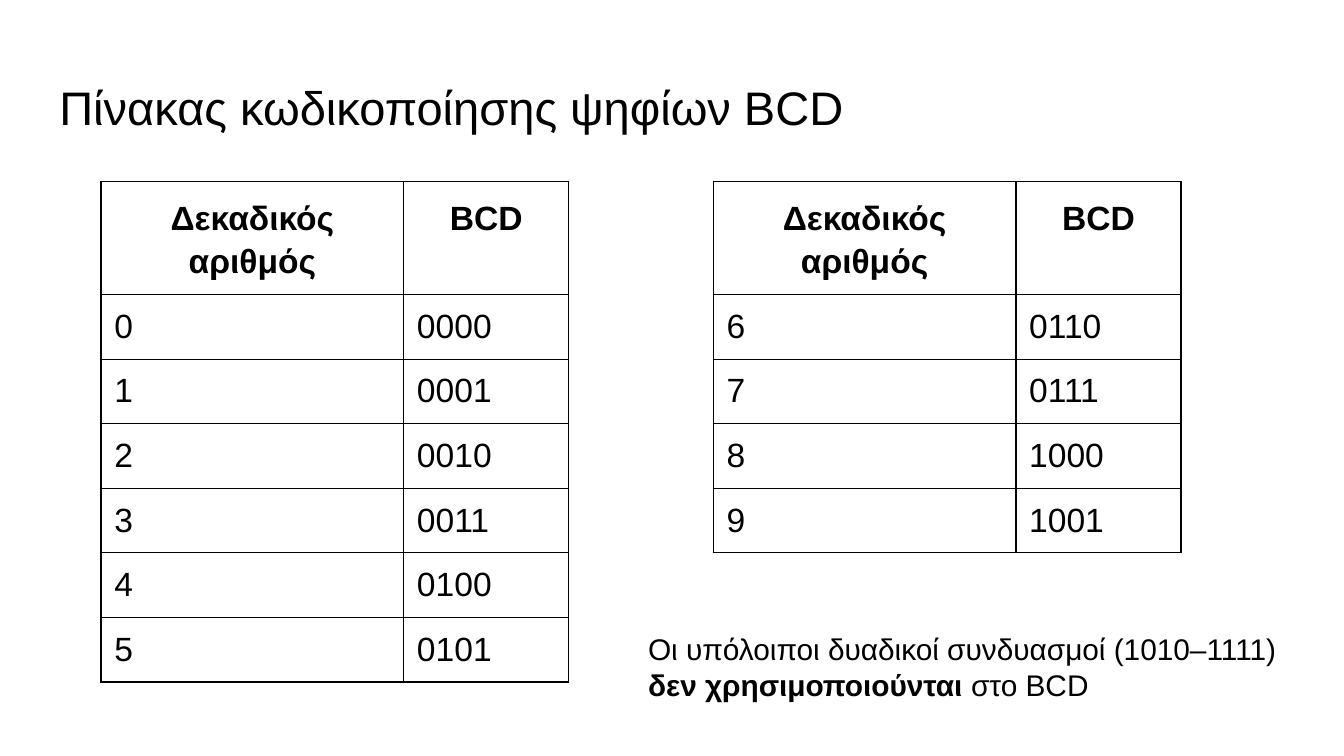
from lxml.etree import SubElement
from pptx import Presentation
from pptx.dml.color import RGBColor
from pptx.enum.text import MSO_ANCHOR, MSO_AUTO_SIZE, PP_ALIGN
from pptx.oxml.ns import qn
from pptx.util import Cm, Pt

# Content
TITLE = "Πίνακας κωδικοποίησης ψηφίων BCD"
HEADER = ("Δεκαδικός αριθμός", "BCD")
DIGIT_GROUPS = [range(0, 6), range(6, 10)]
NOTE = [
    ("Οι υπόλοιποι δυαδικοί συνδυασμοί (1010–1111) ", False),
    ("δεν χρησιμοποιούνται", True),
    (" στο BCD", False),
]

# Style and layout
COLORS = {"text": "000000", "border": "000000"}
FONT = "Arial"
INSET = Cm(0.25)
TABLE_LEFTS = [1.91, 13.48]
TABLE_TOP = 3.43
COLUMN_WIDTHS = [5.72, 3.12]
HEADER_HEIGHT, ROW_HEIGHT = 2.14, 1.22


def add_run(paragraph, text, size, bold=False):
    run = paragraph.add_run()
    run.text = text
    run.font.name = FONT
    run.font.size = Pt(size)
    run.font.bold = bold
    run.font.color.rgb = RGBColor.from_string(COLORS["text"])


def set_insets(target):
    target.margin_left = target.margin_right = INSET
    target.margin_top = target.margin_bottom = INSET


def set_borders(cell, width=0.75):
    properties = cell._tc.get_or_add_tcPr()
    for side in ("a:lnL", "a:lnR", "a:lnT", "a:lnB"):
        line = SubElement(properties, qn(side), w=str(Pt(width)))
        fill = SubElement(line, qn("a:solidFill"))
        SubElement(fill, qn("a:srgbClr"), val=COLORS["border"])


def add_code_table(slide, left, digits):
    rows = [HEADER] + [(str(digit), f"{digit:04b}") for digit in digits]
    height = HEADER_HEIGHT + ROW_HEIGHT * len(digits)
    table = slide.shapes.add_table(
        len(rows), len(HEADER), Cm(left), Cm(TABLE_TOP),
        Cm(sum(COLUMN_WIDTHS)), Cm(height)).table
    table.first_row = table.horz_banding = False
    for column, width in zip(table.columns, COLUMN_WIDTHS):
        column.width = Cm(width)
    for row_index, values in enumerate(rows):
        is_header = row_index == 0
        table.rows[row_index].height = Cm(HEADER_HEIGHT if is_header else ROW_HEIGHT)
        for column_index, value in enumerate(values):
            cell = table.cell(row_index, column_index)
            set_insets(cell)
            set_borders(cell)
            cell.fill.background()
            paragraph = cell.text_frame.paragraphs[0]
            if is_header:
                paragraph.alignment = PP_ALIGN.CENTER
                paragraph.line_spacing = 1.15
            add_run(paragraph, value, 18, bold=is_header)


def main():
    presentation = Presentation()
    presentation.slide_width, presentation.slide_height = Cm(25.4), Cm(14.29)
    slide = presentation.slides.add_slide(presentation.slide_layouts[5])

    # Title
    title = slide.shapes.title
    title.left, title.top, title.width, title.height = Cm(0.87), Cm(1.24), Cm(23.67), Cm(1.6)
    frame = title.text_frame
    set_insets(frame)
    frame.word_wrap = True
    frame.auto_size = MSO_AUTO_SIZE.NONE
    frame.vertical_anchor = MSO_ANCHOR.TOP
    frame.paragraphs[0].alignment = PP_ALIGN.LEFT
    add_run(frame.paragraphs[0], TITLE, 25.2)

    # Code tables
    for left, digits in zip(TABLE_LEFTS, DIGIT_GROUPS):
        add_code_table(slide, left, digits)

    # Note on the unused codes
    note = slide.shapes.add_textbox(Cm(12), Cm(11.68), Cm(12.55), Cm(1.88))
    frame = note.text_frame
    set_insets(frame)
    frame.word_wrap = True
    frame.auto_size = MSO_AUTO_SIZE.SHAPE_TO_FIT_TEXT
    for text, bold in NOTE:
        add_run(frame.paragraphs[0], text, 16, bold)

    presentation.save("out.pptx")


if __name__ == "__main__":
    main()
